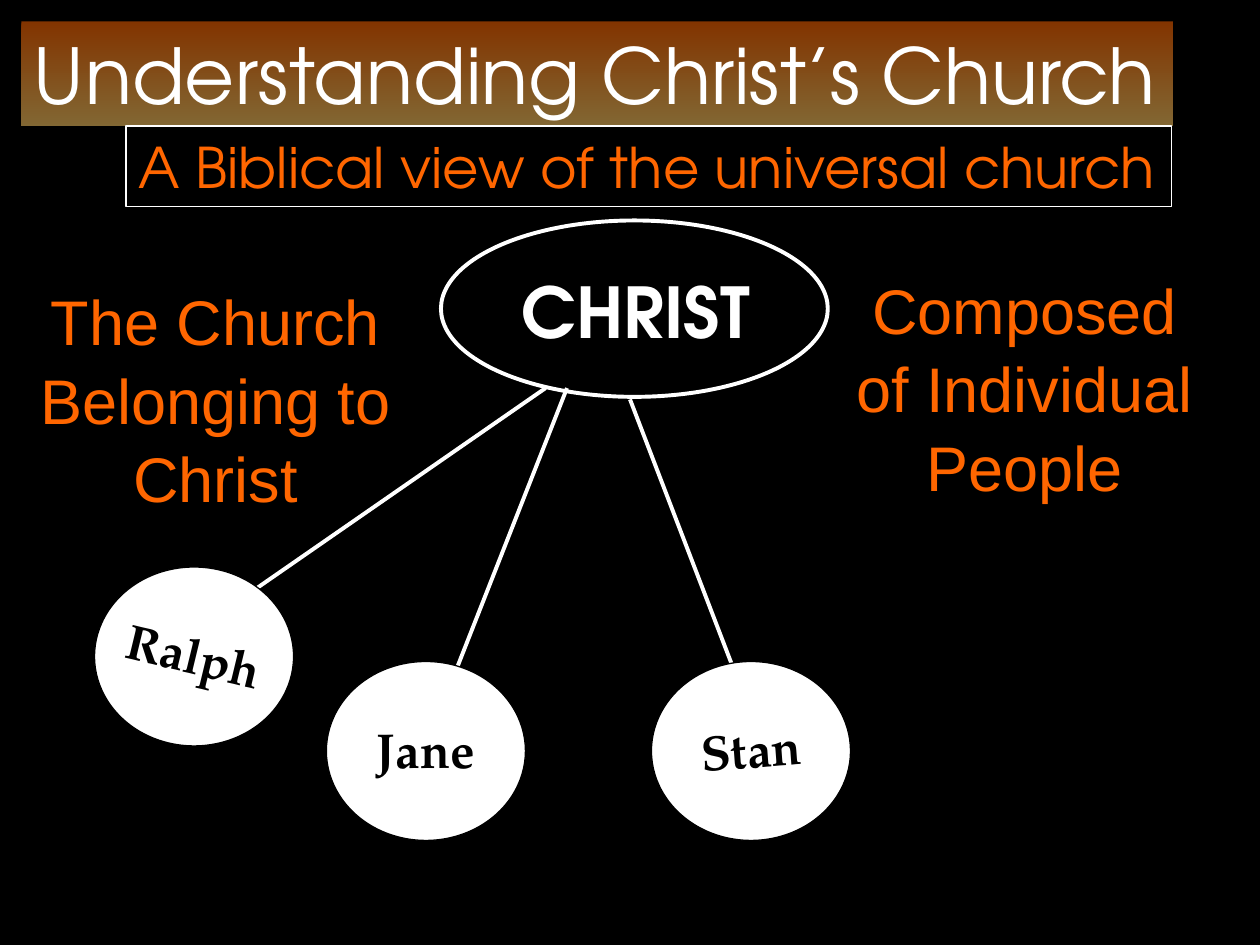
from dataclasses import dataclass

from lxml.etree import SubElement
from pptx import Presentation
from pptx.dml.color import RGBColor
from pptx.enum.shapes import MSO_CONNECTOR, MSO_SHAPE
from pptx.enum.text import MSO_ANCHOR, PP_ALIGN
from pptx.oxml.ns import qn
from pptx.util import Inches, Pt

COLORS = {
    "black": "000000",
    "white": "FFFFFF",
    "orange": "FF6600",
    "sand": "FFCC66",
}
HEAD, NAME, BODY = "TeX Gyre Adventor", "TeX Gyre Pagella", "Arial"


@dataclass
class Person:
    name: str
    left: float
    top: float
    start: tuple[float, float]
    end: tuple[float, float]
    rotation: float = 0


PEOPLE = [
    Person("Ralph", 0.75, 4.5, (4.33, 3.08), (1.92, 4.75), 13.7),
    Person("Jane", 2.59, 5.25, (4.5, 3.08), (3.58, 5.42)),
    Person("Stan", 5.17, 5.25, (5, 3.17), (5.83, 5.33), 355.8),
]


def rgb(name: str) -> RGBColor:
    return RGBColor.from_string(COLORS[name])


def write(sp, text: str, *, size: float, font: str, color: str, bold=False,
          align=PP_ALIGN.CENTER, wrap=True, spacing=None) -> None:
    tf = sp.text_frame
    tf.word_wrap = wrap
    tf.vertical_anchor = MSO_ANCHOR.TOP
    for i, line in enumerate(text.split("\n")):
        p = tf.add_paragraph() if i else tf.paragraphs[0]
        p.alignment = align
        p.line_spacing = spacing
        r = p.add_run()
        r.text = line
        r.font.size = Pt(size)
        r.font.name = font
        r.font.bold = bold
        r.font.color.rgb = rgb(color)


def add_text(s, box: tuple, text: str, rotation: float = 0, **fmt) -> None:
    sp = s.shapes.add_textbox(*map(Inches, box))
    sp.rotation = rotation
    write(sp, text, **fmt)


def add_shape(s, kind, box: tuple, fill=None, line=None, width=0.75):
    sp = s.shapes.add_shape(kind, *map(Inches, box))
    sp.shadow.inherit = False
    if fill:
        sp.fill.solid()
        sp.fill.fore_color.rgb = rgb(fill)
    else:
        sp.fill.background()
    if line:
        sp.line.color.rgb = rgb(line)
        sp.line.width = Pt(width)
    else:
        sp.line.fill.background()
    return sp


def add_gradient(sp, names: tuple, opacity: int) -> None:
    sp.fill.gradient()
    sp.fill.gradient_angle = 270
    for i, (stop, name) in enumerate(zip(sp.fill.gradient_stops, names)):
        stop.position = i
        stop.color.rgb = rgb(name)
    for clr in sp.fill._xPr.find(qn("a:gradFill")).iter(qn("a:srgbClr")):
        SubElement(clr, qn("a:alpha")).set("val", str(opacity * 1000))


def add_line(s, start: tuple, end: tuple) -> None:
    cn = s.shapes.add_connector(MSO_CONNECTOR.STRAIGHT, *map(Inches, start + end))
    cn.line.color.rgb = rgb("white")
    cn.line.width = Pt(2.25)
    SubElement(cn._element.spPr, qn("a:effectLst"))


def add_person(s, person: Person) -> None:
    add_line(s, person.start, person.end)
    add_shape(s, MSO_SHAPE.OVAL, (person.left, person.top, 1.58, 1.42), "white", "black")
    add_text(s, (person.left - 0.09, person.top + 0.41, 1.76, 0.57), person.name,
             person.rotation, size=28, font=NAME, color="black", bold=True)


def main() -> None:
    prs = Presentation()
    prs.slide_width, prs.slide_height = Inches(10), Inches(7.5)
    s = prs.slides.add_slide(prs.slide_layouts[6])
    s.background.fill.solid()
    s.background.fill.fore_color.rgb = rgb("black")

    title = add_shape(s, MSO_SHAPE.RECTANGLE, (0.17, 0.17, 9.14, 0.83))
    add_gradient(title, ("orange", "sand"), 51)
    write(title, "Understanding Christ’s Church", size=44, font=HEAD,
          color="white", align=PP_ALIGN.LEFT, wrap=False)
    subtitle = add_shape(s, MSO_SHAPE.RECTANGLE, (1, 1, 8.3, 0.64), line="white")
    write(subtitle, "A Biblical view of the universal church", size=32, font=HEAD,
          color="orange", align=PP_ALIGN.LEFT, wrap=False)

    add_text(s, (3.42, 2.08, 3.25, 0.77), "CHRIST", size=40, font=HEAD,
             color="white", bold=True)
    add_shape(s, MSO_SHAPE.OVAL, (3.5, 1.75, 3.07, 1.4), line="white", width=2.25)

    body = dict(size=36, font=BODY, color="orange", spacing=1.04)
    add_text(s, (0.17, 2.17, 3.08, 1.9), "The Church Belonging to Christ", **body)
    add_text(s, (6.17, 2.08, 3.92, 1.9), "Composed\nof Individual People", **body)

    for person in PEOPLE:
        add_person(s, person)

    prs.save("out.pptx")


if __name__ == "__main__":
    main()
